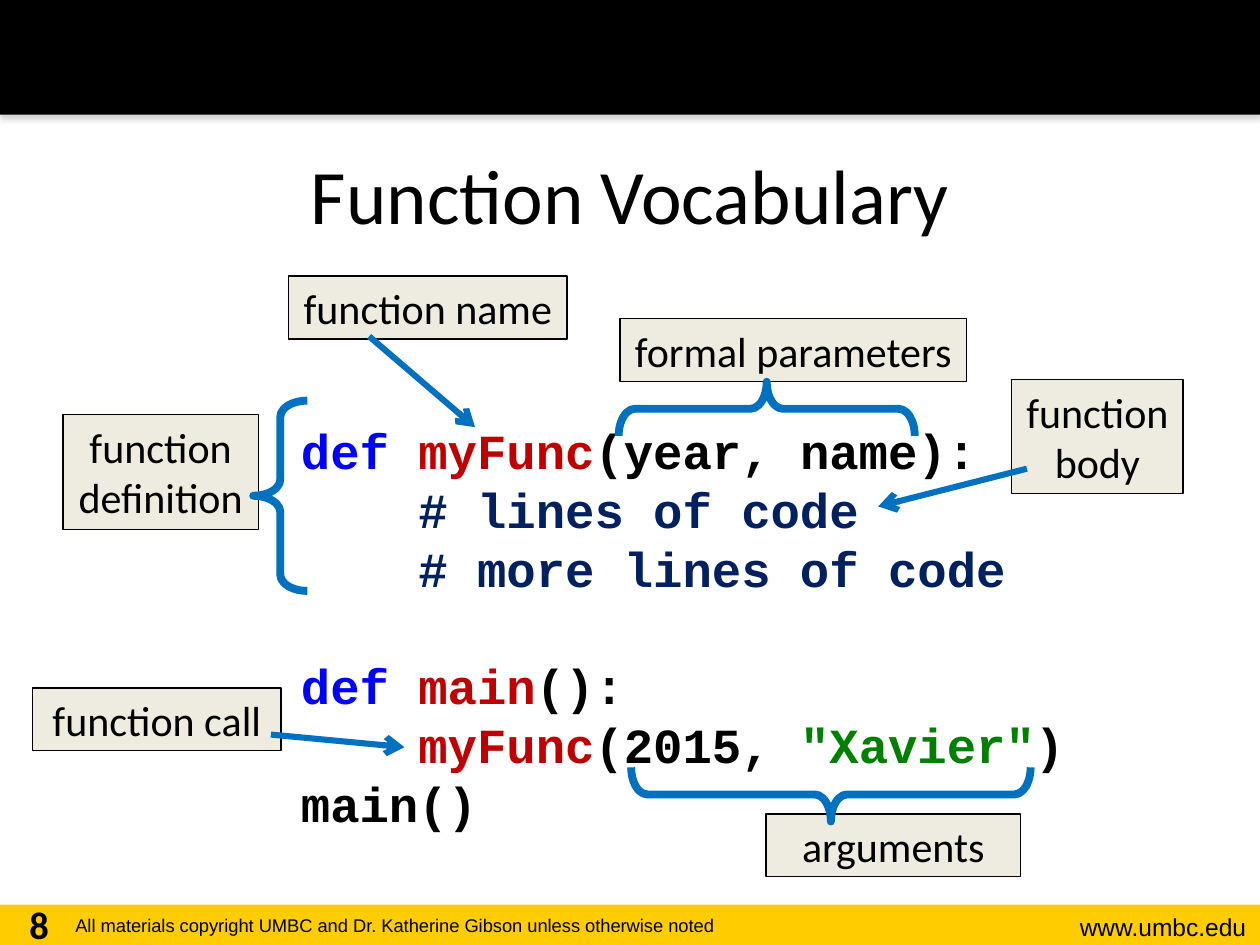
from dataclasses import dataclass

from lxml.etree import SubElement
from pptx import Presentation
from pptx.dml.color import RGBColor
from pptx.enum.shapes import MSO_CONNECTOR, MSO_SHAPE
from pptx.enum.text import MSO_ANCHOR, PP_ALIGN
from pptx.oxml.ns import qn
from pptx.shapes.autoshape import Shape
from pptx.slide import Slide
from pptx.util import Inches, Pt

WIDTH, HEIGHT = 10, 7.5
TITLE_ONLY = 5


@dataclass(frozen=True)
class Theme:
    black: str = "000000"
    gold: str = "FFCC00"
    label_fill: str = "EEECE1"
    marker: str = "0070C0"
    shadow: str = "808080"
    keyword: str = "0000FF"
    name: str = "C00000"
    comment: str = "002060"
    string: str = "008000"
    body_font: str = "Calibri"
    footer_font: str = "Arial"
    code_font: str = "Courier New"
    title_size: float = 44
    code_size: float = 28
    code_pitch: float = 33.6
    label_size: float = 24
    number_size: float = 22
    site_size: float = 14
    credit_size: float = 10.5
    outline: float = 0.75
    arrow_width: float = 3.5
    brace_width: float = 4.5


THEME = Theme()


@dataclass(frozen=True)
class Area:
    left: float
    top: float
    width: float
    height: float

    def lengths(self) -> tuple:
        return tuple(Inches(value) for value in (self.left, self.top, self.width, self.height))


@dataclass(frozen=True)
class Label:
    text: str
    area: Area


@dataclass(frozen=True)
class Brace:
    area: Area
    rotation: int


@dataclass(frozen=True)
class Arrow:
    start: tuple[float, float]
    end: tuple[float, float]


HEADER = Area(0, 0, WIDTH, 0.91)
FOOTER = Area(0, 7.18, WIDTH, 0.32)
TITLE = Area(0.5, HEADER.height, WIDTH - 1, 1.25)
CODE = Area(2.29, 3.29, 8.21, 3.4)
ONE_LINE, TWO_LINES = 0.5, 0.91
BRACE_DEPTH = 0.43

LABELS = [
    Label("function name", Area(2.29, 2.19, 2.21, ONE_LINE)),
    Label("formal parameters", Area(4.92, 2.53, 2.75, ONE_LINE)),
    Label("arguments", Area(6.08, 6.46, 2.02, ONE_LINE)),
    Label("function body", Area(8.03, 3.01, 1.36, TWO_LINES)),
    Label("function call", Area(0.26, 5.46, 1.97, ONE_LINE)),
    Label("function definition", Area(0.5, 3.29, 1.55, TWO_LINES)),
]
BRACES = [
    Brace(Area(5.87, 2.07, BRACE_DEPTH, 2.35), 90),
    Brace(Area(2.01, 3.18, BRACE_DEPTH, 1.51), 0),
    Brace(Area(6.38, 4.72, BRACE_DEPTH, 3.17), 270),
]
ARROWS = [
    Arrow((2.93, 2.67), (3.77, 3.39)),
    Arrow((2.15, 5.83), (3.21, 5.93)),
    Arrow((8.15, 3.72), (6.97, 4.02)),
]
INDENT = ("    ", THEME.black)
CODE_BLOCKS = [
    [
        [("def ", THEME.keyword), ("myFunc", THEME.name), ("(year, name):", THEME.black)],
        [INDENT, ("# lines of code", THEME.comment)],
        [INDENT, ("# more lines of code", THEME.comment)],
    ],
    [
        [("def ", THEME.keyword), ("main", THEME.name), ("():", THEME.black)],
        [INDENT, ("myFunc", THEME.name), ("(2015, ", THEME.black),
         ('"Xavier"', THEME.string), (")", THEME.black)],
        [("main()", THEME.black)],
    ],
]


def style(font, name: str, size: float, color: str = THEME.black, bold: bool = False) -> None:
    font.name, font.size, font.bold = name, Pt(size), bold
    font.color.rgb = RGBColor.from_string(color)


def write(box: Shape, text: str, name: str, size: float, align: PP_ALIGN, bold: bool = False) -> None:
    box.text_frame.word_wrap = True
    box.text_frame.text = text
    para = box.text_frame.paragraphs[0]
    para.alignment = align
    style(para.runs[0].font, name, size, bold=bold)


def add_text(slide: Slide, area: Area, text: str, name: str, size: float,
             align: PP_ALIGN = PP_ALIGN.LEFT, bold: bool = False) -> None:
    write(slide.shapes.add_textbox(*area.lengths()), text, name, size, align, bold)


def add_box(slide: Slide, area: Area, fill: str) -> Shape:
    box = slide.shapes.add_shape(MSO_SHAPE.RECTANGLE, *area.lengths())
    box.shadow.inherit = False
    box.fill.solid()
    box.fill.fore_color.rgb = RGBColor.from_string(fill)
    box.line.fill.background()
    return box


def add_bar_shadow(bar: Shape) -> None:
    effects = bar._element.spPr.find(qn("a:effectLst"))
    shadow = SubElement(effects, qn("a:outerShdw"), blurRad=str(Pt(3.1)), dist=str(Pt(1.8)),
                        dir="5400000", rotWithShape="0")
    color = SubElement(shadow, qn("a:srgbClr"), val=THEME.shadow)
    SubElement(color, qn("a:alpha"), val="35000")


def set_line(line, color: str, width: float) -> None:
    line.color.rgb = RGBColor.from_string(color)
    line.width = Pt(width)


def add_label(slide: Slide, label: Label) -> None:
    box = add_box(slide, label.area, THEME.label_fill)
    set_line(box.line, THEME.black, THEME.outline)
    write(box, label.text, THEME.body_font, THEME.label_size, PP_ALIGN.CENTER)


def add_brace(slide: Slide, brace: Brace) -> None:
    shape = slide.shapes.add_shape(MSO_SHAPE.LEFT_BRACE, *brace.area.lengths())
    shape.shadow.inherit = False
    shape.adjustments[0], shape.adjustments[1] = 0.3, 0.5
    shape.rotation = brace.rotation
    shape.fill.background()
    set_line(shape.line, THEME.marker, THEME.brace_width)


def add_arrow(slide: Slide, arrow: Arrow) -> None:
    points = [Inches(value) for value in arrow.start + arrow.end]
    connector = slide.shapes.add_connector(MSO_CONNECTOR.STRAIGHT, *points)
    set_line(connector.line, THEME.marker, THEME.arrow_width)
    SubElement(connector.line._get_or_add_ln(), qn("a:tailEnd"), type="arrow")
    SubElement(connector._element.spPr, qn("a:effectLst"))


def add_code(slide: Slide) -> None:
    frame = slide.shapes.add_textbox(*CODE.lengths()).text_frame
    frame.word_wrap = True
    for block_index, block in enumerate(CODE_BLOCKS):
        for line_index, line in enumerate(block):
            first = block_index == line_index == 0
            para = frame.paragraphs[0] if first else frame.add_paragraph()
            para.line_spacing = Pt(THEME.code_pitch)
            if block_index and not line_index:
                para.space_before = Pt(THEME.code_pitch)
            for text, color in line:
                span = para.add_run()
                span.text = text
                style(span.font, THEME.code_font, THEME.code_size, color, bold=True)


def main() -> None:
    deck = Presentation()
    deck.slide_width, deck.slide_height = Inches(WIDTH), Inches(HEIGHT)
    page = deck.slides.add_slide(deck.slide_layouts[TITLE_ONLY])
    add_box(page, FOOTER, THEME.gold)
    add_bar_shadow(add_box(page, HEADER, THEME.black))
    add_text(page, Area(8, 7.19, 1.99, 0.34), "www.umbc.edu",
             THEME.footer_font, THEME.site_size, PP_ALIGN.RIGHT)
    add_text(page, Area(0.5, 7.21, 6.56, 0.29),
             "All materials copyright UMBC and Dr. Katherine Gibson unless otherwise noted",
             THEME.footer_font, THEME.credit_size)
    title = page.shapes.title
    title.left, title.top, title.width, title.height = TITLE.lengths()
    write(title, "Function Vocabulary", THEME.body_font, THEME.title_size, PP_ALIGN.CENTER)
    title.text_frame.vertical_anchor = MSO_ANCHOR.MIDDLE
    add_text(page, Area(0, 7.1, 0.62, 0.4), "8", THEME.body_font, THEME.number_size,
             PP_ALIGN.CENTER, bold=True)
    add_code(page)
    for label in LABELS:
        add_label(page, label)
    for brace in BRACES:
        add_brace(page, brace)
    for arrow in ARROWS:
        add_arrow(page, arrow)


    deck.save("out.pptx")


if __name__ == "__main__":
    main()
